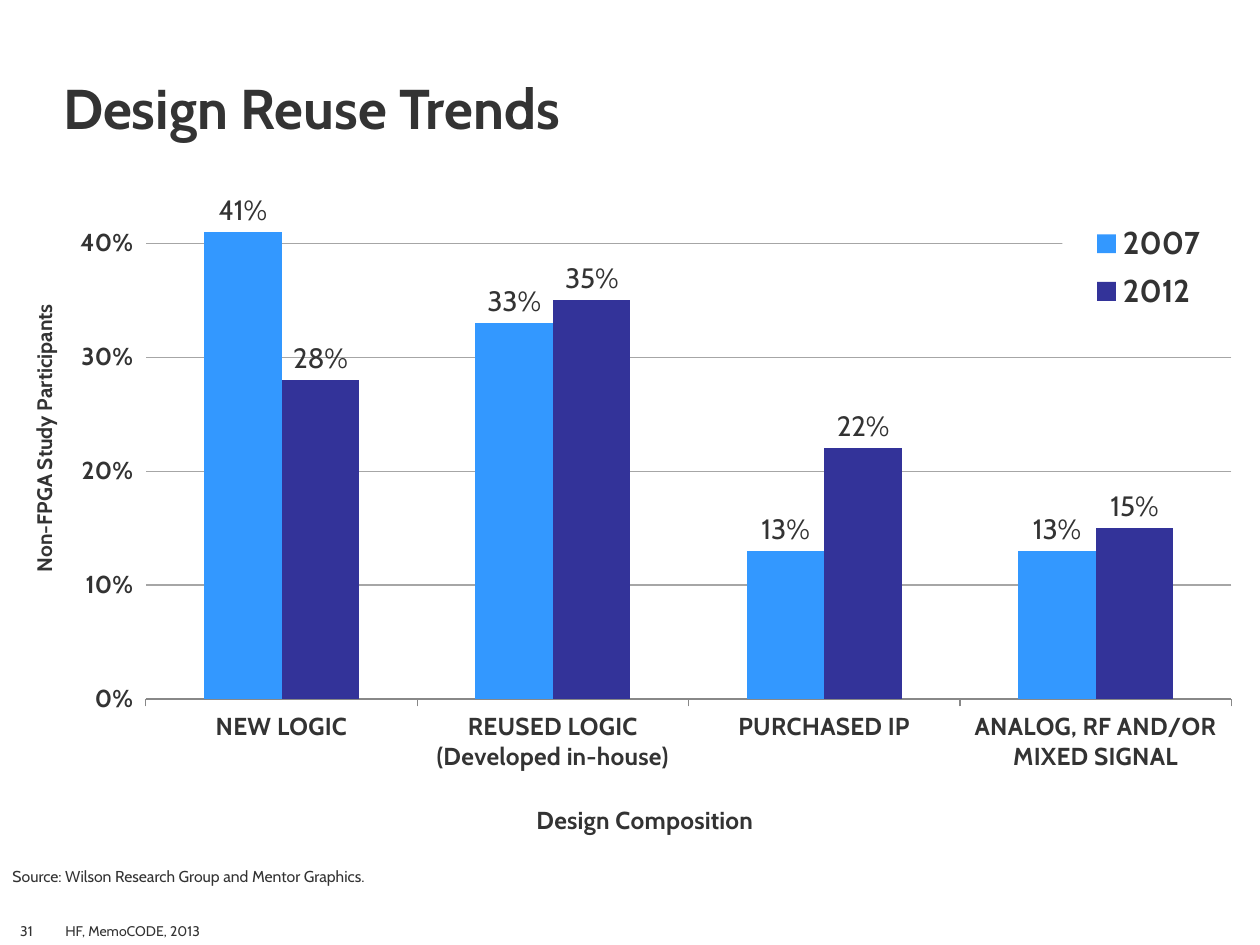
import pptx
import pptx.util
import pptx.dml.color
import pptx.chart.data
import pptx.enum.chart
import pptx.enum.text
import pptx.oxml
import pptx.oxml.ns

Pt = pptx.util.Pt
Rgb = pptx.dml.color.RGBColor.from_string
enum = pptx.enum.chart
align = pptx.enum.text.PP_ALIGN
anchor = pptx.enum.text.MSO_ANCHOR

theme = {
    "font": "Cabin", "ink": "333333", "grid": "A6A6A6", "axis": "888888",
    "bars": ["3398FF", "333399"],
    "title": 32, "legend": 18, "label": 16, "tick": 14,
    "side": 12, "note": 9, "foot": 8,
}


def style(font, size, bold=False):
    font.name = theme["font"]
    font.size = Pt(theme[size])
    font.bold = bold
    font.color.rgb = Rgb(theme["ink"])


def place(node, index, **share):
    old = node.find(pptx.oxml.ns.qn("c:layout"))
    if old is not None:
        node.remove(old)
    target = '<c:layoutTarget val="inner"/>' if index == 0 else ""
    modes = "".join(f'<c:{key}Mode val="edge"/>' for key in share if key in "xy")
    sizes = "".join(f'<c:{key} val="{val}"/>' for key, val in share.items())
    node.insert(index, pptx.oxml.parse_xml(
        f'<c:layout {pptx.oxml.ns.nsdecls("c")}><c:manualLayout>'
        f"{target}{modes}{sizes}</c:manualLayout></c:layout>"))


deck = pptx.Presentation()
deck.slide_width = pptx.util.Inches(10)
deck.slide_height = pptx.util.Inches(7.5)
wide, high = deck.slide_width, deck.slide_height
slide = deck.slides.add_slide(deck.slide_layouts[5])

title = slide.shapes.title
title.left, title.top = 0, 0
title.width, title.height = wide, int(high * 0.156)
frame = title.text_frame
frame.text = "Design Reuse Trends"
frame.auto_size = pptx.enum.text.MSO_AUTO_SIZE.NONE
frame.vertical_anchor = anchor.BOTTOM
frame.margin_left = frame.margin_right = int(wide * 0.05)
frame.paragraphs[0].alignment = align.LEFT
style(frame.paragraphs[0].runs[0].font, "title", True)

data = pptx.chart.data.CategoryChartData(number_format="0%")
data.categories = ["NEW LOGIC", "REUSED LOGIC (Developed in-house)",
                   "PURCHASED IP", "ANALOG, RF AND/OR MIXED SIGNAL"]
data.add_series("2007", [0.41, 0.33, 0.13, 0.13])
data.add_series("2012", [0.28, 0.35, 0.22, 0.15])
chart = slide.shapes.add_chart(
    enum.XL_CHART_TYPE.COLUMN_CLUSTERED, int(wide * 0.011), int(high * 0.2),
    int(wide * 0.979), int(high * 0.693), data).chart
chart.has_title = False
style(chart.font, "tick")
place(chart._chartSpace.chart.plotArea, 0, x=0.107, y=0.031, w=0.88, h=0.748)

plot = chart.plots[0]
plot.gap_width = 150
plot.overlap = 0
plot.vary_by_categories = False
for bars, color in zip(plot.series, theme["bars"]):
    bars.format.fill.solid()
    bars.format.fill.fore_color.rgb = Rgb(color)
    labels = bars.data_labels
    labels.show_value = True
    labels.number_format = "0%"
    labels.number_format_is_linked = False
    labels.position = enum.XL_LABEL_POSITION.OUTSIDE_END
    style(labels.font, "label")

across, up = chart.category_axis, chart.value_axis
for axis, text, size, x, y in [
    (across, "Design Composition", "tick", 0.42, 0.93),
    (up, "Non-FPGA Study Participants", "side", 0.01, 0.17),
]:
    axis.major_tick_mark = enum.XL_TICK_MARK.OUTSIDE
    axis.minor_tick_mark = enum.XL_TICK_MARK.NONE
    style(axis.tick_labels.font, "tick", True)
    name = axis.axis_title
    name.text_frame.text = text
    style(name.text_frame.paragraphs[0].runs[0].font, size, True)
    place(name._element, 1, x=x, y=y)
turn = up.axis_title.text_frame._txBody.bodyPr
turn.set("rot", "-5400000")
turn.set("vert", "horz")
across.format.line.color.rgb = Rgb(theme["axis"])
across.format.line.width = Pt(0.75)
up.format.line.fill.background()
up.minimum_scale, up.maximum_scale, up.major_unit = 0, 0.43, 0.1
up.tick_labels.number_format = "0%"
up.tick_labels.number_format_is_linked = False
up.has_major_gridlines = True
up.major_gridlines.format.line.color.rgb = Rgb(theme["grid"])
up.major_gridlines.format.line.width = Pt(0.75)

chart.has_legend = True
legend = chart.legend
legend.position = enum.XL_LEGEND_POSITION.RIGHT
legend.include_in_layout = False
style(legend.font, "legend", True)
place(legend._element, 1, x=0.85, y=0.04, w=0.14, h=0.16)
legend._element.find(pptx.oxml.ns.qn("c:overlay")).addnext(pptx.oxml.parse_xml(
    f'<c:spPr {pptx.oxml.ns.nsdecls("c", "a")}><a:solidFill>'
    '<a:srgbClr val="FFFFFF"/></a:solidFill></c:spPr>'))

for text, left, top, width, size, side, hold in [
    ("Source: Wilson Research Group and Mentor Graphics.",
     0, 0.911, 0.622, "note", align.LEFT, anchor.TOP),
    ("31", 0, 0.967, 0.042, "foot", align.CENTER, anchor.BOTTOM),
    ("HF, MemoCODE, 2013", 0.042, 0.967, 0.57, "foot", align.LEFT, anchor.BOTTOM),
]:
    box = slide.shapes.add_textbox(int(wide * left), int(high * top),
                                   int(wide * width), int(high / 30))
    frame = box.text_frame
    frame.word_wrap = True
    frame.vertical_anchor = hold
    frame.text = text
    frame.paragraphs[0].alignment = side
    style(frame.paragraphs[0].runs[0].font, size)

deck.save("out.pptx")
